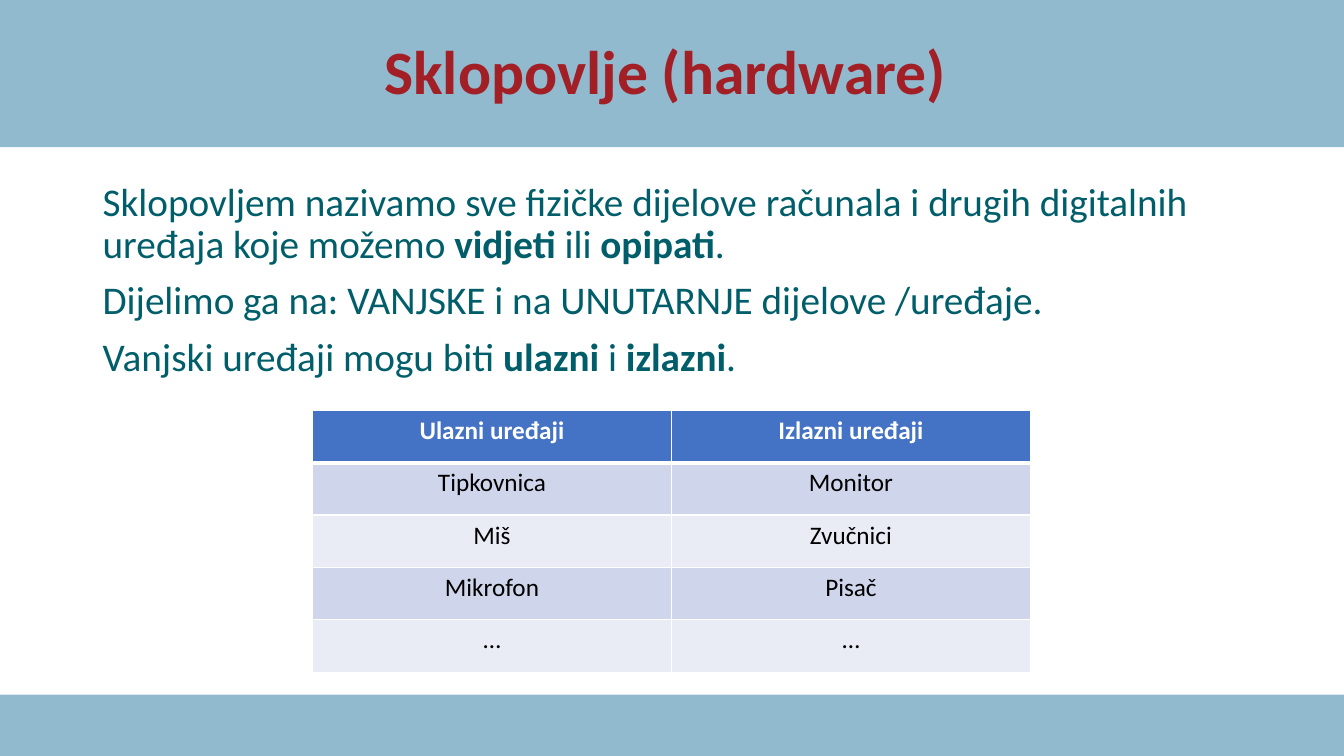
from typing import NamedTuple

from lxml import etree
from pptx import Presentation
from pptx.dml.color import RGBColor
from pptx.enum.shapes import MSO_SHAPE
from pptx.enum.text import MSO_ANCHOR, PP_ALIGN
from pptx.oxml.ns import qn
from pptx.util import Inches, Pt

RECTANGLE = MSO_SHAPE.RECTANGLE
CENTER, LEFT = PP_ALIGN.CENTER, PP_ALIGN.LEFT
TOP, MIDDLE = MSO_ANCHOR.TOP, MSO_ANCHOR.MIDDLE

BAND_BLUE = RGBColor(0x91, 0xBA, 0xCF)
TITLE_RED = RGBColor(0xA3, 0x1F, 0x26)
BODY_TEAL = RGBColor(0x00, 0x5E, 0x6A)
HEADER_BLUE = RGBColor(0x44, 0x72, 0xC4)
ROW_DARK = RGBColor(0xCF, 0xD5, 0xEA)
ROW_LIGHT = RGBColor(0xE9, 0xEB, 0xF5)
WHITE = RGBColor(0xFF, 0xFF, 0xFF)
BLACK = RGBColor(0x00, 0x00, 0x00)
FONT = "Calibri"


class Band(NamedTuple):
    top: float
    height: float


class Run(NamedTuple):
    text: str
    bold: bool = False


class TextBlock(NamedTuple):
    top: float
    height: float
    size: int
    color: RGBColor
    align: PP_ALIGN
    anchor: MSO_ANCHOR
    paragraphs: list[list[Run]]


BANDS = [Band(6.89, 0.61), Band(0, 1.46)]

TEXT_BLOCKS = [
    TextBlock(0.21, 1.06, 44, TITLE_RED, CENTER, MIDDLE,
              [[Run("Sklopovlje (hardware) ", True)]]),
    TextBlock(1.76, 2.18, 28, BODY_TEAL, LEFT, TOP, [
        [Run("Sklopovljem nazivamo sve fizičke dijelove računala i drugih "
             "digitalnih uređaja koje možemo "),
         Run("vidjeti ", True), Run("ili "), Run("opipati", True), Run(".")],
        [Run("Dijelimo ga na: VANJSKE i na UNUTARNJE dijelove /uređaje.")],
        [Run("Vanjski uređaji mogu biti "),
         Run("ulazni ", True), Run("i "), Run("izlazni", True), Run(".")],
    ]),
]

DEVICES = [
    ("Ulazni uređaji", "Izlazni uređaji"),
    ("Tipkovnica", "Monitor"),
    ("Miš", "Zvučnici"),
    ("Mikrofon", "Pisač"),
    ("…", "…"),
]


def add_run(paragraph, run: Run, size: int, color: RGBColor) -> None:
    text_run = paragraph.add_run()
    text_run.text = run.text
    font = text_run.font
    font.name, font.size, font.bold = FONT, Pt(size), run.bold
    font.color.rgb = color


def add_band(slide, band: Band) -> None:
    shape = slide.shapes.add_shape(
        RECTANGLE, 0, Inches(band.top), Inches(13.33), Inches(band.height))
    shape.shadow.inherit = False
    shape.fill.solid()
    shape.fill.fore_color.rgb = BAND_BLUE
    shape.line.fill.background()


def add_text_block(slide, block: TextBlock) -> None:
    text_box = slide.shapes.add_textbox(
        Inches(0.92), Inches(block.top), Inches(11.5), Inches(block.height))
    frame = text_box.text_frame
    frame.word_wrap = True
    frame.vertical_anchor = block.anchor
    for index, runs in enumerate(block.paragraphs):
        paragraph = frame.add_paragraph() if index else frame.paragraphs[0]
        paragraph.alignment = block.align
        paragraph.line_spacing = 0.9
        paragraph.space_before = Pt(10 if index else 0)
        for run in runs:
            add_run(paragraph, run, block.size, block.color)


def set_borders(cell, top: float, bottom: float) -> None:
    properties = cell._tc.get_or_add_tcPr()
    widths = {"a:lnL": 1, "a:lnR": 1, "a:lnT": top, "a:lnB": bottom}
    # Border lines come before the fill in the cell properties
    for position, (tag, width) in enumerate(widths.items()):
        line = etree.Element(qn(tag), w=str(Pt(width)))
        fill = etree.SubElement(line, qn("a:solidFill"))
        etree.SubElement(fill, qn("a:srgbClr"), val=str(WHITE))
        properties.insert(position, line)


def add_device_table(slide) -> None:
    table = slide.shapes.add_table(
        len(DEVICES), 2, Inches(3.1), Inches(4.07),
        Inches(7.12), Inches(2.6)).table
    for row_index, devices in enumerate(DEVICES):
        header = row_index == 0
        table.rows[row_index].height = Inches(0.52)
        stripe = ROW_DARK if row_index % 2 else ROW_LIGHT
        for column_index, device in enumerate(devices):
            cell = table.cell(row_index, column_index)
            cell.fill.solid()
            cell.fill.fore_color.rgb = HEADER_BLUE if header else stripe
            set_borders(cell, 3 if row_index == 1 else 1, 3 if header else 1)
            paragraph = cell.text_frame.paragraphs[0]
            paragraph.alignment = CENTER
            add_run(paragraph, Run(device, header), 18,
                    WHITE if header else BLACK)


def main() -> None:
    presentation = Presentation()
    presentation.slide_width = Inches(13.33)
    presentation.slide_height = Inches(7.5)
    slide = presentation.slides.add_slide(presentation.slide_layouts[6])

    # Top and bottom bands
    for band in BANDS:
        add_band(slide, band)

    # Title and body
    for block in TEXT_BLOCKS:
        add_text_block(slide, block)

    # Input and output devices
    add_device_table(slide)

    presentation.save("out.pptx")


if __name__ == "__main__":
    main()
